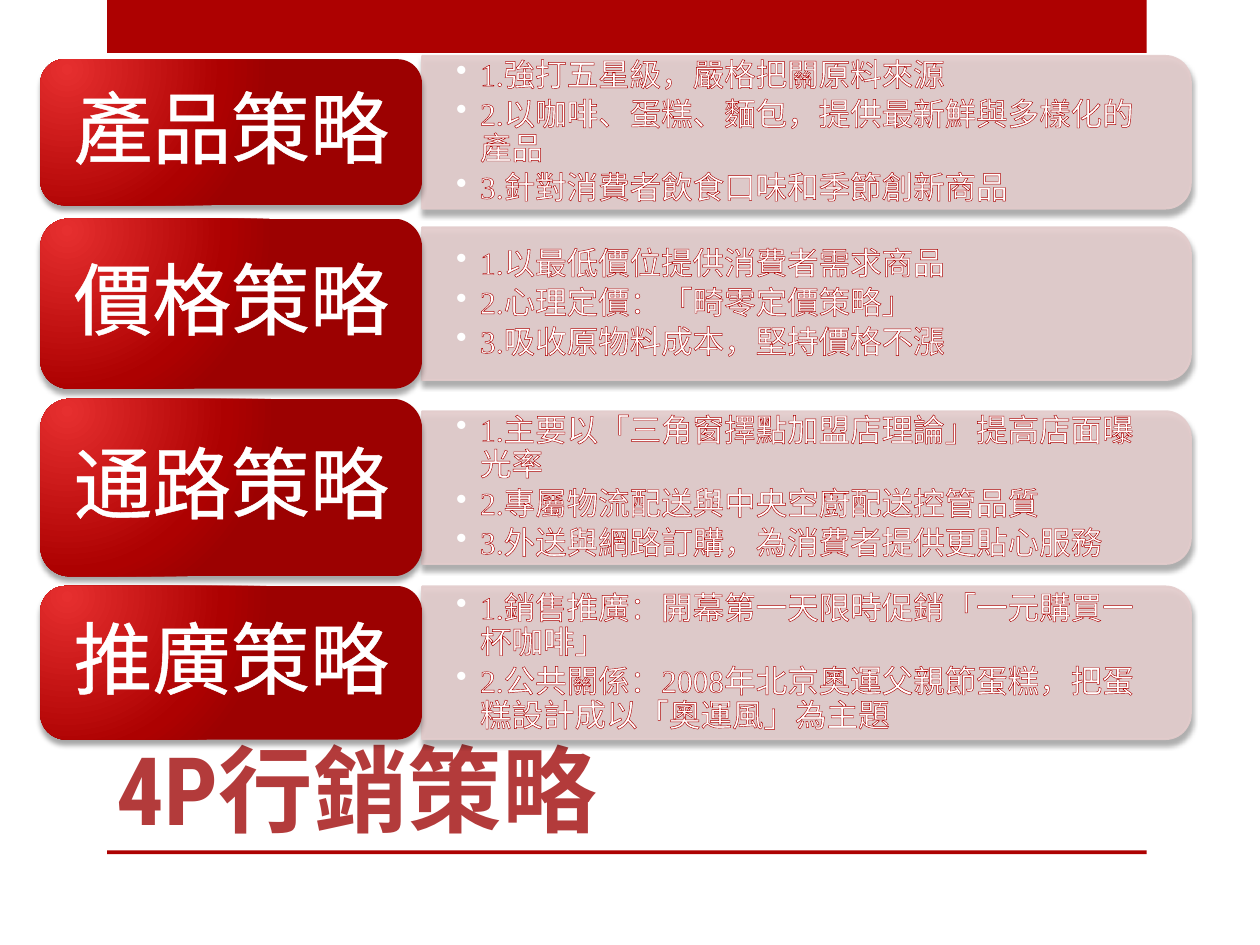
from pptx import Presentation
from pptx.dml.color import RGBColor
from pptx.enum.shapes import MSO_SHAPE as Shape
from pptx.enum.text import MSO_ANCHOR as Anchor, PP_ALIGN as Align
from pptx.oxml import parse_xml
from pptx.oxml.ns import nsdecls, qn
from pptx.util import Inches, Pt

COLORS = {"red": "AD0101", "white": "FFFFFF", "panel": "E3CCCC", "shadow": "000000"}
LABEL_STOPS = [(0, "E62F2F"), (76, "AD0101"), (100, "9C0101")]
TITLE_STOPS = [(0, "C06969"), (49, "B33B3B"), (50, "900000"), (92, "810000"), (100, "7E0000")]
LABEL_SHADE = '<a:path path="circle"><a:fillToRect l="15000" t="15000" r="100000" b="100000"/></a:path>'
TITLE_SHADE = '<a:lin ang="5400000" scaled="0"/>'

SERIF = "Times New Roman"
LABEL_LEFT, LABEL_WIDTH = 0.32, 3.03
PANEL_LEFT, PANEL_WIDTH, PANEL_HEIGHT = 3.35, 6.1, 1.21
TEXT_WIDTH, TEXT_HEIGHT = 6.04, 1.1

# Label, vertical middle of the row, label height, points
STRATEGIES = [
    ("產品策略", 1.05, 1.16, [
        "1.強打五星級，嚴格把關原料來源",
        "2.以咖啡、蛋糕、麵包，提供最新鮮與多樣化的產品",
        "3.針對消費者飲食口味和季節創新商品"]),
    ("價格策略", 2.41, 1.35, [
        "1.以最低價位提供消費者需求商品",
        "2.心理定價：「畸零定價策略」",
        "3.吸收原物料成本，堅持價格不漲"]),
    ("通路策略", 3.87, 1.41, [
        "1.主要以「三角窗擇點加盟店理論」提高店面曝光率",
        "2.專屬物流配送與中央空廚配送控管品質",
        "3.外送與網路訂購，為消費者提供更貼心服務"]),
    ("推廣策略", 5.26, 1.22, [
        "1.銷售推廣：開幕第一天限時促銷「一元購買一杯咖啡」",
        "2.公共關係：2008年北京奧運父親節蛋糕，把蛋糕設計成以「奧運風」為主題"]),
]


def rgb(name):
    return RGBColor.from_string(COLORS[name])


def gradient(stops, shade):
    marks = "".join(f'<a:gs pos="{position * 1000}"><a:srgbClr val="{color}"/></a:gs>'
                    for position, color in stops)
    return parse_xml(f'<a:gradFill {nsdecls("a")} rotWithShape="1">'
                     f'<a:gsLst>{marks}</a:gsLst>{shade}</a:gradFill>')


def text_outline(color, width):
    return parse_xml(f'<a:ln {nsdecls("a")} w="{Pt(width)}"><a:solidFill>'
                     f'<a:srgbClr val="{COLORS[color]}"/></a:solidFill></a:ln>')


def add_bullet(paragraph, indent):
    properties = paragraph._p.get_or_add_pPr()
    properties.set("marL", str(Inches(indent)))
    properties.set("indent", str(-Inches(indent)))
    properties.append(parse_xml(f'<a:buChar {nsdecls("a")} char="•"/>'))


def write_text(shape, lines, *, size, font, color=None, stops=None, bold=False,
               outline=None, align=Align.LEFT, anchor=Anchor.MIDDLE,
               insets=(0.1, 0.05), line_spacing=None, space_after=None, bullet=None):
    frame = shape.text_frame
    frame.word_wrap = True
    frame.vertical_anchor = anchor
    frame.margin_left = frame.margin_right = Inches(insets[0])
    frame.margin_top = frame.margin_bottom = Inches(insets[1])
    for number, line in enumerate(lines):
        paragraph = frame.add_paragraph() if number else frame.paragraphs[0]
        paragraph.alignment = align
        paragraph.line_spacing = line_spacing
        paragraph.space_after = space_after
        if bullet:
            add_bullet(paragraph, bullet)
        run = paragraph.add_run()
        run.text = line
        run.font.size, run.font.name, run.font.bold = Pt(size), font, bold
        if stops:
            run.font._element.insert(0, gradient(stops, TITLE_SHADE))
        else:
            run.font.color.rgb = rgb(color)
        if outline:
            run.font._element.insert(0, text_outline(*outline))


def add_box(slide, kind, left, top, width, height, fill=None):
    shape = slide.shapes.add_shape(kind, Inches(left), Inches(top), Inches(width), Inches(height))
    shape.shadow.inherit = False
    shape.line.fill.background()
    if fill:
        shape.fill.solid()
        shape.fill.fore_color.rgb = rgb(fill)
    return shape


def add_text_box(slide, left, top, width, height):
    return slide.shapes.add_textbox(Inches(left), Inches(top), Inches(width), Inches(height))


def add_shadow(shape):
    effects = shape._element.spPr.find(qn("a:effectLst"))
    effects.append(parse_xml(
        f'<a:outerShdw {nsdecls("a")} blurRad="{Pt(3)}" dist="{Pt(3)}" dir="5400000" '
        f'rotWithShape="0"><a:srgbClr val="{COLORS["shadow"]}">'
        '<a:alpha val="35000"/></a:srgbClr></a:outerShdw>'))


def add_panel(slide, middle, points):
    # Upright shape turned a quarter, so the round corners face right
    center = PANEL_LEFT + PANEL_WIDTH / 2
    panel = add_box(slide, Shape.ROUND_2_SAME_RECTANGLE, center - PANEL_HEIGHT / 2,
                    middle - PANEL_WIDTH / 2, PANEL_HEIGHT, PANEL_WIDTH, "panel")
    panel.rotation = 90
    panel.line.color.rgb = rgb("panel")
    panel.line.width = Pt(1.25)
    for color in panel._element.spPr.iter(qn("a:srgbClr")):
        color.append(parse_xml(f'<a:alpha {nsdecls("a")} val="90000"/>'))
    add_shadow(panel)

    text_box = add_text_box(slide, PANEL_LEFT, middle - TEXT_HEIGHT / 2, TEXT_WIDTH, TEXT_HEIGHT)
    write_text(text_box, points, size=18, font=SERIF, color="white", outline=("red", 0.8),
               insets=(0.27, 0.14), line_spacing=0.9, space_after=Pt(3), bullet=0.19)


def add_label(slide, middle, height, text):
    label = add_box(slide, Shape.ROUNDED_RECTANGLE, LABEL_LEFT, middle - height / 2,
                    LABEL_WIDTH, height)
    label.fill.background()
    properties = label._element.spPr
    properties.replace(properties.find(qn("a:noFill")), gradient(LABEL_STOPS, LABEL_SHADE))
    add_shadow(label)
    write_text(label, [text], size=45, font=SERIF, color="white", outline=("white", 1.45),
               align=Align.CENTER, insets=(0.19, 0.09), line_spacing=0.9)


def main():
    presentation = Presentation()
    presentation.slide_width, presentation.slide_height = Inches(10), Inches(7.5)
    slide = presentation.slides.add_slide(presentation.slide_layouts[6])

    # Top band and bottom rule
    for top, height in ((0, 0.42), (6.75, 0.03)):
        add_box(slide, Shape.RECTANGLE, 0.85, top, 8.25, height, "red")

    # Title
    write_text(add_text_box(slide, 0.83, 5.72, 7.42, 1.03), ["4P行銷策略"], size=54,
               font="Roboto Condensed", stops=TITLE_STOPS, bold=True, anchor=Anchor.BOTTOM)

    # Strategy rows
    for text, middle, label_height, points in STRATEGIES:
        add_panel(slide, middle, points)
        add_label(slide, middle, label_height, text)

    presentation.save("out.pptx")


if __name__ == "__main__":
    main()
